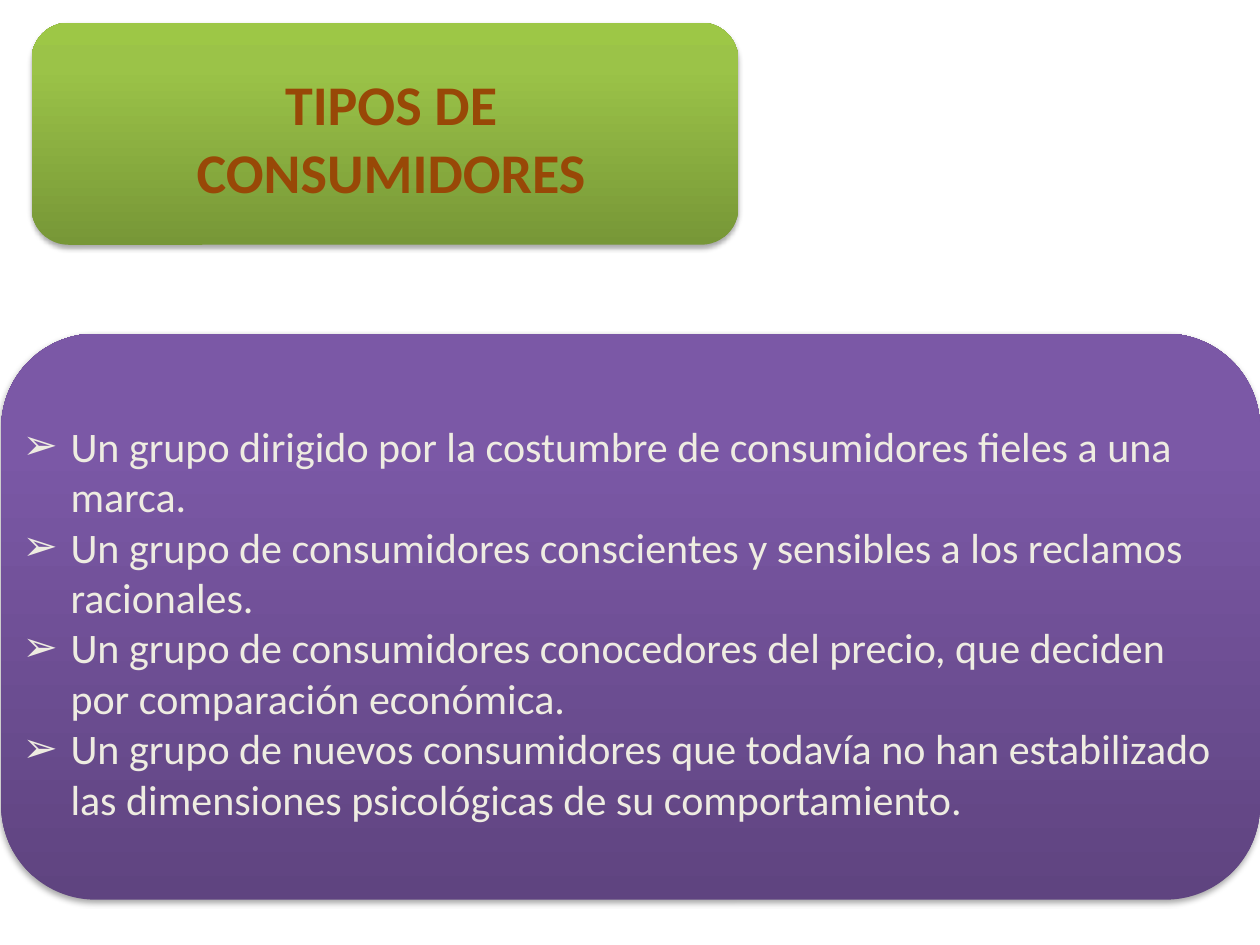
import copy
from dataclasses import dataclass

import lxml.etree
import pptx
import pptx.dml.color
import pptx.enum.shapes
import pptx.enum.text
import pptx.oxml
import pptx.oxml.ns
import pptx.util

WIDTH = pptx.util.Inches(10)
HEIGHT = pptx.util.Inches(7.5)
FONT = "Calibri"
TITLE = "TIPOS DE CONSUMIDORES"
CONSUMER_GROUPS = [
    "Un grupo dirigido por la costumbre de consumidores fieles a una marca.",
    "Un grupo de consumidores conscientes y sensibles a los reclamos racionales.",
    "Un grupo de consumidores conocedores del precio, que deciden por comparación económica.",
    "Un grupo de nuevos consumidores que todavía no han estabilizado "
    "las dimensiones psicológicas de su comportamiento.",
]


@dataclass
class Area:
    left: float
    top: float
    width: float
    height: float

    def lengths(self) -> tuple:
        return (
            round(self.left * WIDTH),
            round(self.top * HEIGHT),
            round(self.width * WIDTH),
            round(self.height * HEIGHT),
        )


@dataclass
class Panel:
    area: Area
    colours: tuple


PANELS = [
    Panel(Area(0.025, 0.024, 0.561, 0.235), ("779737", "9BC348", "9DC746")),
    Panel(Area(0.001, 0.353, 0.999, 0.599), ("5F4480", "7B58A6", "7C57A8")),
]
TITLE_AREA = Area(0.098, 0.06, 0.425, 0.17)
LIST_AREA = Area(0.008, 0.438, 0.965, 0.498)


def colour(value: str) -> pptx.dml.color.RGBColor:
    return pptx.dml.color.RGBColor.from_string(value)


def add_shadow(shape) -> None:
    effects = pptx.oxml.parse_xml(
        f'<a:effectLst {pptx.oxml.ns.nsdecls("a")}>'
        f'<a:outerShdw blurRad="{pptx.util.Pt(3.1)}" dist="{pptx.util.Pt(1.8)}" '
        'dir="5400000" rotWithShape="0"><a:srgbClr val="000000">'
        '<a:alpha val="35000"/></a:srgbClr></a:outerShdw></a:effectLst>'
    )
    shape._element.spPr.append(effects)


def draw_panel(page, panel: Panel) -> None:
    shape = page.shapes.add_shape(
        pptx.enum.shapes.MSO_SHAPE.ROUNDED_RECTANGLE, *panel.area.lengths()
    )
    shape.line.fill.background()
    shape.fill.gradient()
    shape.fill.gradient_angle = 90
    stop_list = shape._element.spPr.find(".//" + pptx.oxml.ns.qn("a:gsLst"))
    stop_list.append(copy.deepcopy(stop_list[0]))
    for stop, position, value in zip(
        shape.fill.gradient_stops, (0, 0.8, 1), panel.colours
    ):
        stop.position = position
        stop.color.rgb = colour(value)
    add_shadow(shape)


def place_text(page, box, area: Area, anchor):
    box.left, box.top, box.width, box.height = area.lengths()
    page.shapes._spTree.append(box._element)
    frame = box.text_frame
    frame.word_wrap = True
    frame.auto_size = pptx.enum.text.MSO_AUTO_SIZE.NONE
    frame.vertical_anchor = anchor
    return frame


def add_span(para, text: str, size: int, value: str, bold: bool = False) -> None:
    span = para.add_run()
    span.text = text
    span.font.name = FONT
    span.font.size = pptx.util.Pt(size)
    span.font.bold = bold
    span.font.color.rgb = colour(value)


def add_bullet(para) -> None:
    properties = para._p.get_or_add_pPr()
    indent = pptx.util.Inches(0.38)
    properties.set("marL", str(indent))
    properties.set("indent", str(-indent))
    bullet = lxml.etree.SubElement(properties, pptx.oxml.ns.qn("a:buChar"))
    bullet.set("char", "➢")


def main() -> None:
    deck = pptx.Presentation()
    deck.slide_width, deck.slide_height = WIDTH, HEIGHT
    page = deck.slides.add_slide(deck.slide_layouts[1])
    for panel in PANELS:
        draw_panel(page, panel)

    anchors = pptx.enum.text.MSO_ANCHOR
    title = place_text(page, page.shapes.title, TITLE_AREA, anchors.MIDDLE)
    title.paragraphs[0].alignment = pptx.enum.text.PP_ALIGN.CENTER
    add_span(title.paragraphs[0], TITLE, 32, "984807", bold=True)

    body = place_text(page, page.placeholders[1], LIST_AREA, anchors.TOP)
    for index, group in enumerate(CONSUMER_GROUPS):
        para = body.add_paragraph() if index else body.paragraphs[0]
        add_bullet(para)
        para.space_before = pptx.util.Pt(0)
        add_span(para, group, 24, "EEECE1")

    deck.save("out.pptx")


if __name__ == "__main__":
    main()
